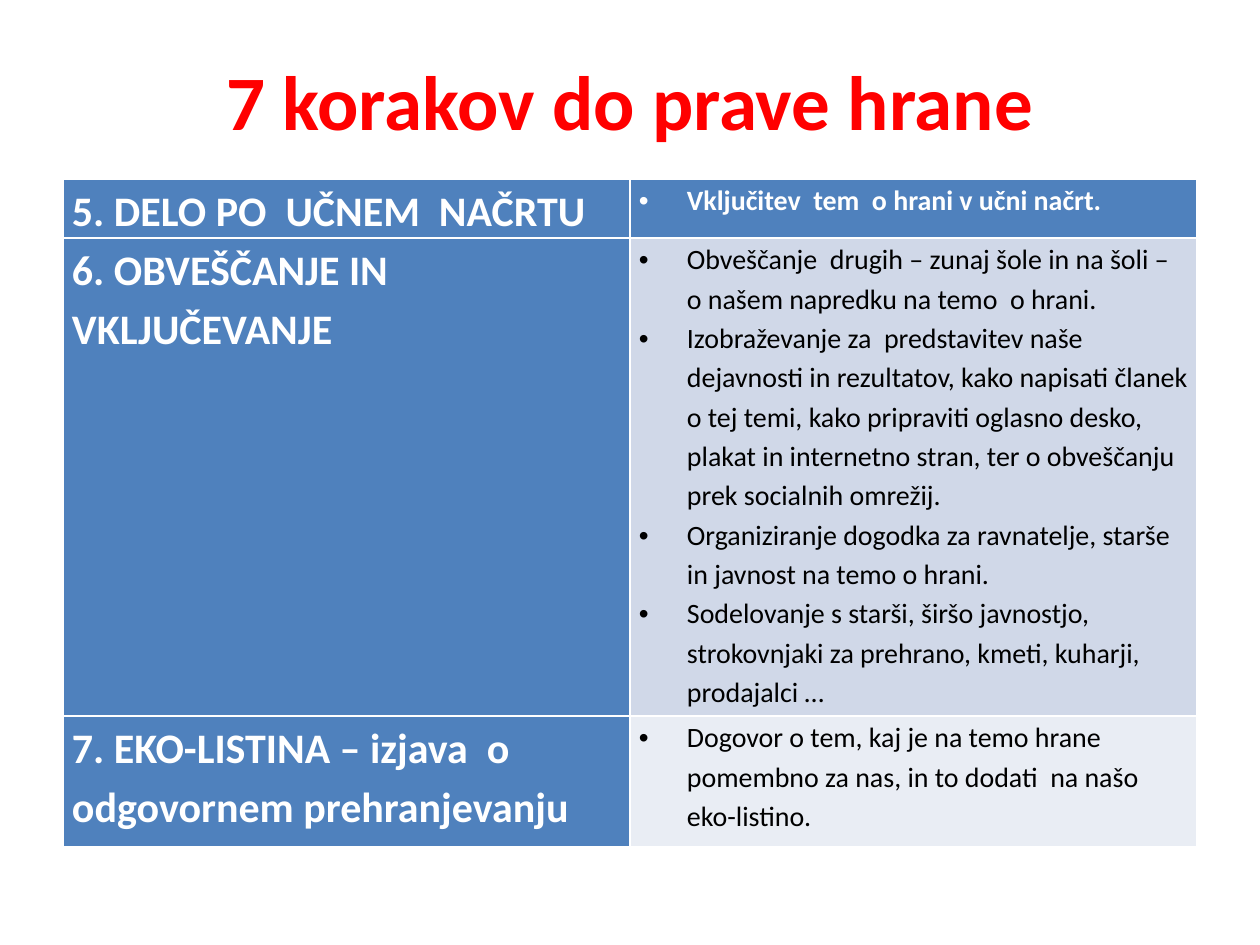
from lxml.etree import SubElement
from pptx import Presentation
from pptx.dml.color import RGBColor
from pptx.enum.text import MSO_ANCHOR, PP_ALIGN
from pptx.oxml.ns import qn
from pptx.util import Pt

RED = RGBColor(0xFF, 0x00, 0x00)
BLUE = RGBColor(0x4F, 0x81, 0xBD)
PALE = RGBColor(0xD0, 0xD8, 0xE8)
LIGHT = RGBColor(0xE9, 0xED, 0xF4)
WHITE = RGBColor(0xFF, 0xFF, 0xFF)
BLACK = RGBColor(0x00, 0x00, 0x00)
FONT = "Calibri"


def px(n):
    return round(n * 914400 / 126)


def style(para, size, color, bold):
    font = para.font
    font.name = FONT
    font.size = Pt(size)
    font.bold = bold
    font.color.rgb = color


STEPS = [
    (42, "5. DELO PO  UČNEM  NAČRTU", BLUE, WHITE, True,
     ["Vključitev  tem  o hrani v učni načrt."]),
    (478, "6. OBVEŠČANJE IN VKLJUČEVANJE", PALE, BLACK, False,
     ["Obveščanje  drugih – zunaj šole in na šoli ‒ o našem napredku na temo  o hrani.",
      "Izobraževanje za  predstavitev naše dejavnosti in rezultatov, kako napisati članek "
      "o tej temi, kako pripraviti oglasno desko, plakat in internetno stran, "
      "ter o obveščanju prek socialnih omrežij.",
      "Organiziranje dogodka za ravnatelje, starše in javnost na temo o hrani.",
      "Sodelovanje s starši, širšo javnostjo, strokovnjaki za prehrano, kmeti, kuharji, "
      "prodajalci …"]),
    (131, "7. EKO-LISTINA – izjava  o odgovornem prehranjevanju", LIGHT, BLACK, False,
     ["Dogovor o tem, kaj je na temo hrane pomembno za nas, in to dodati  na našo "
      "eko-listino."]),
]

deck = Presentation()
deck.slide_width, deck.slide_height = px(1260), px(945)
slide = deck.slides.add_slide(deck.slide_layouts[5])

title = slide.shapes.title
title.left, title.top, title.width, title.height = px(63), px(21), px(1134), px(158)
title.text_frame.text = "7 korakov do prave hrane"
title.text_frame.vertical_anchor = MSO_ANCHOR.MIDDLE
head = title.text_frame.paragraphs[0]
head.alignment = PP_ALIGN.CENTER
style(head, 44, RED, True)

tall = sum(step[0] for step in STEPS)
grid = slide.shapes.add_table(len(STEPS), 2, px(63), px(179), px(1134), px(tall)).table
grid.first_col = True
for col in grid.columns:
    col.width = px(567)

for row, (high, name, fill, ink, bold, tasks) in enumerate(STEPS):
    grid.rows[row].height = px(high)
    sides = [([name], BLUE, 24, WHITE, True), (tasks, fill, 16, ink, bold)]
    for col, (lines, back, size, color, heavy) in enumerate(sides):
        cell = grid.cell(row, col)
        cell.margin_left = cell.margin_right = px(9)
        cell.margin_top = cell.margin_bottom = 0
        cell.fill.solid()
        cell.fill.fore_color.rgb = back
        cell.text_frame.text = "\n".join(lines)
        for para in cell.text_frame.paragraphs:
            para.line_spacing = 1.15
            if col == 1:
                props = para._p.get_or_add_pPr()
                props.set("marL", str(px(48)))
                props.set("indent", str(-px(48)))
                SubElement(props, qn("a:buFont")).set("typeface", "Arial")
                SubElement(props, qn("a:buChar")).set("char", "•")
            style(para, size, color, heavy)

deck.save("out.pptx")
